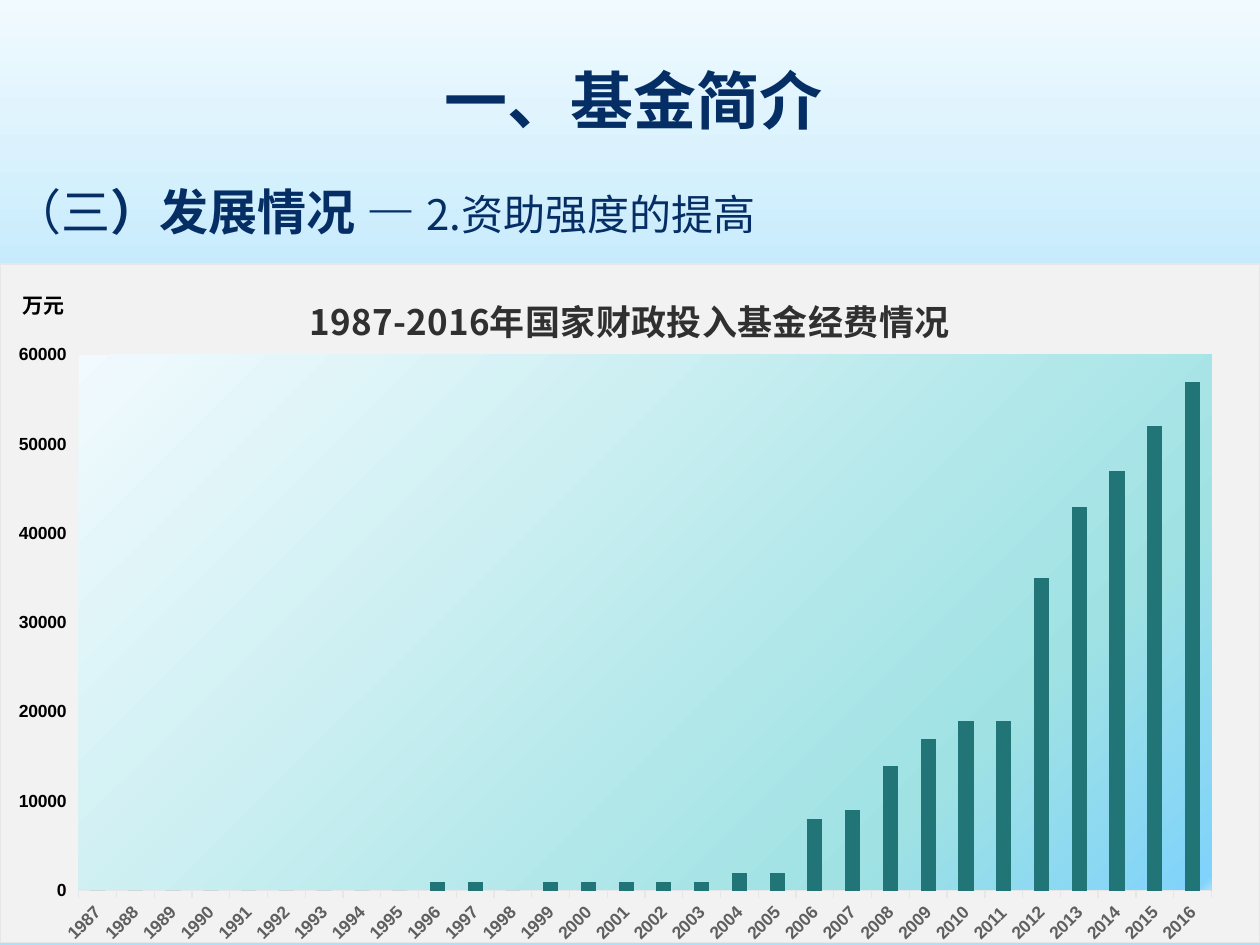
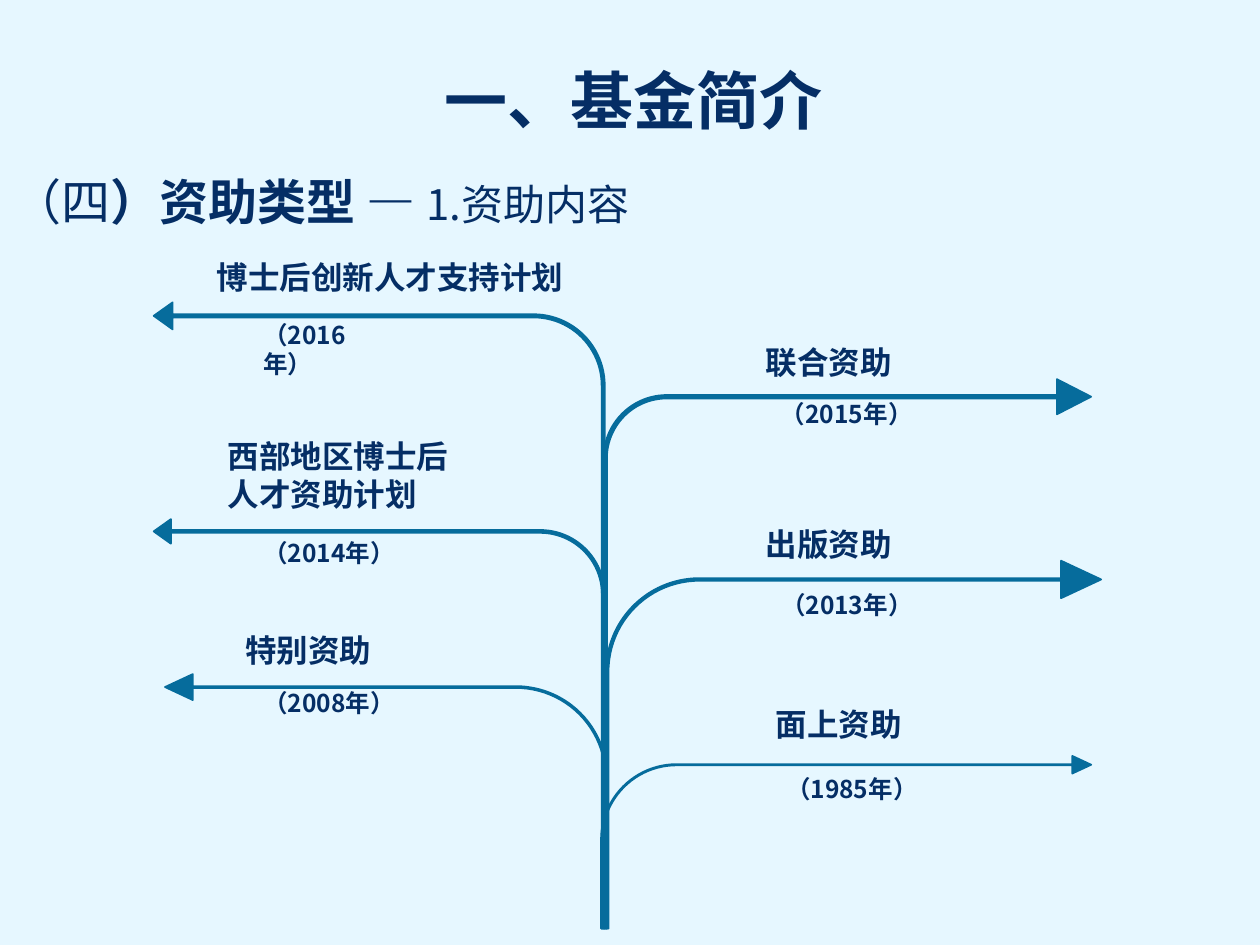
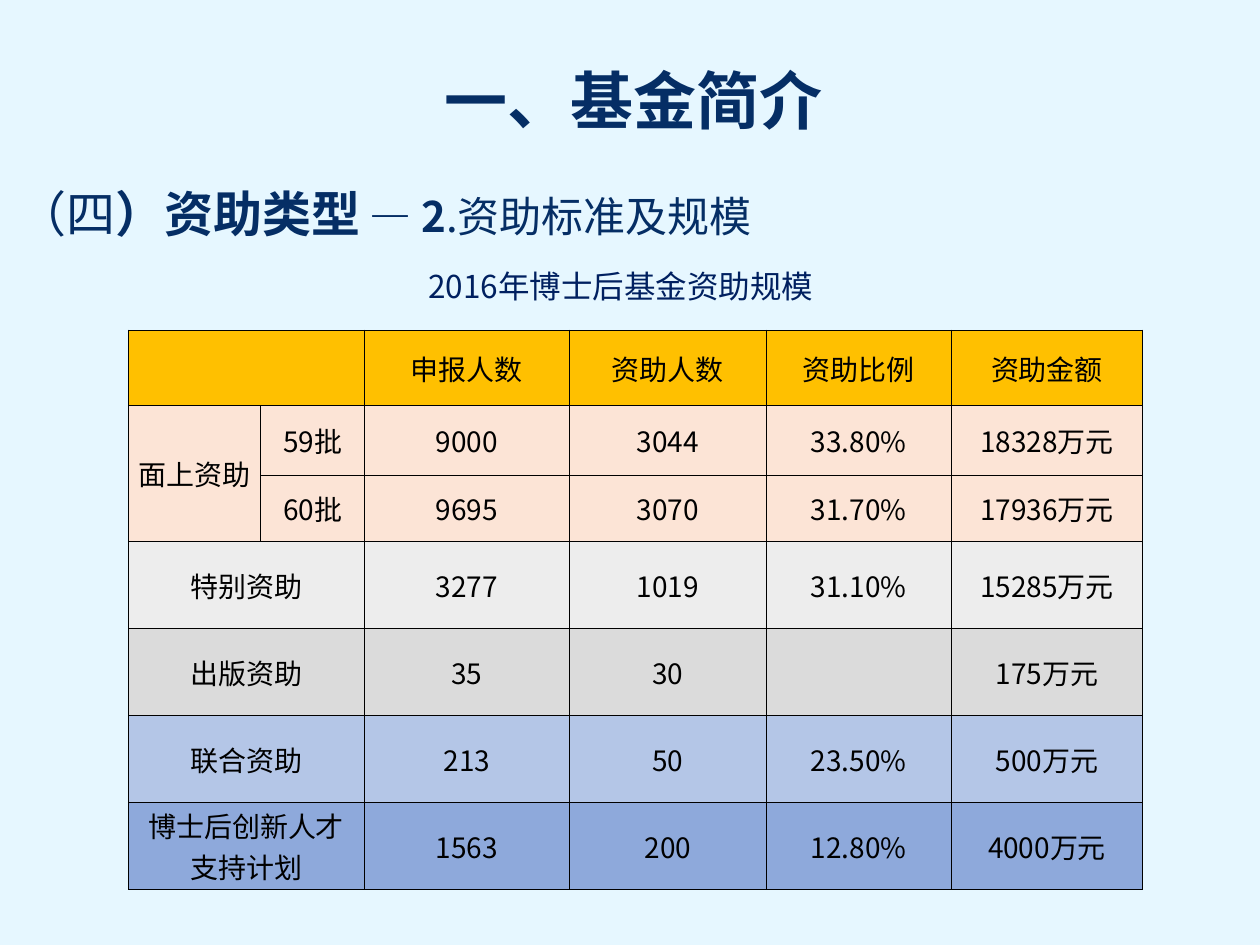
from lxml import etree
from pptx import Presentation
from pptx.chart.data import CategoryChartData
from pptx.dml.color import RGBColor
from pptx.enum.chart import XL_CHART_TYPE, XL_TICK_MARK
from pptx.enum.shapes import MSO_SHAPE
from pptx.enum.text import MSO_ANCHOR, MSO_AUTO_SIZE, PP_ALIGN
from pptx.oxml import parse_xml
from pptx.oxml.ns import nsdecls, qn
from pptx.util import Inches, Pt

CENTER = PP_ALIGN.CENTER
LEFT = PP_ALIGN.LEFT
TOP = MSO_ANCHOR.TOP
MIDDLE = MSO_ANCHOR.MIDDLE
NO_AUTOFIT = MSO_AUTO_SIZE.NONE
BENT_ARROW = MSO_SHAPE.BENT_ARROW
COLUMNS = XL_CHART_TYPE.COLUMN_CLUSTERED
TICK_OUT = XL_TICK_MARK.OUTSIDE
TICK_NONE = XL_TICK_MARK.NONE

FONT = "Noto Sans CJK SC"
CHART_FONT = "Arial"
COLORS = {
    "page": "E6F7FF", "navy": "052E65", "caption": "002060", "branch": "066C9C",
    "black": "000000", "chart": "F2F2F2", "edge": "E7E7E7", "bar": "227577",
    "chart_title": "303030", "years": "5F5F5F", "header": "FFC000", "general": "FCE4D6",
    "special": "EDEDED", "publishing": "DBDBDB", "joint": "B4C6E7", "innovation": "8EA9DB",
}
PAGE_GRADIENT = [(0, "F1FAFE"), (74, "80D3FA"), (83, "80D3FA"), (100, "AAE2FC")]
PLOT_GRADIENT = [(0, "F1FAFE"), (77, "A0E2E4"), (99, "80D3FA"), (100, "AAE2FC")]

TITLE = "一、基金简介"
GROWTH_HEADING = [("（三", 28, False), ("）发展情况 — ", 28, True), ("2.资助强度的提高", 24, False)]
TYPES_HEADING = [("（四", 28, False), ("）资助类型 — ", 28, True), ("1.资助内容", 24, False)]
SCALE_HEADING = [("（四", 28, False), ("）资助类型", 28, True), (" — 2", 24, True),
                 (".资助标准及规模", 24, False)]

CHART_TITLE = "1987-2016年国家财政投入基金经费情况"
FIRST_YEAR = 1987
FUNDING = ([0] * 9 + [1000, 1000, 0] + [1000] * 5
           + [2000, 2000, 8000, 9000, 14000, 17000, 19000, 19000,
              35000, 43000, 47000, 52000, 57000])
PLOT_LAYOUT = {"x": 0.062, "y": 0.134, "w": 0.9, "h": 0.79}

TRUNK_BOTTOM = 7.37
BRANCHES = [
    {"arrow": (4.77, 6, 3.89), "bend": (0.007, 0.051, 0.109, 0.438), "left": False,
     "name": ["面上资助"], "name_at": (6.06, 5.55, 1.54),
     "year": "（1985年）", "year_at": (6.14, 6.09, 1.38)},
    {"arrow": (4.81, 4.45, 3.93), "bend": (0.007, 0.051, 0.109, 0.254), "left": False,
     "name": ["出版资助"], "name_at": (5.98, 4.12, 1.54),
     "year": "（2013年）", "year_at": (6.1, 4.63, 1.72)},
    {"arrow": (4.79, 3.01, 3.87), "bend": (0.007, 0.036, 0.07, 0.13), "left": False,
     "name": ["联合资助"], "name_at": (5.98, 2.67, 1.54),
     "year": "（2015年）", "year_at": (6.1, 3.12, 1.5)},
    {"arrow": (1.31, 5.35, 3.51), "bend": (0.007, 0.051, 0.109, 0.359), "left": True,
     "name": ["特别资助"], "name_at": (1.85, 4.96, 1.54),
     "year": "（2008年）", "year_at": (1.99, 5.41, 1.52)},
    {"arrow": (1.22, 4.12, 3.58), "bend": (0.007, 0.03, 0.042, 0.158), "left": True,
     "name": ["西部地区博士后", "人才资助计划"], "name_at": (1.71, 3.42, 2.3),
     "year": "（2014年）", "year_at": (1.99, 4.22, 1.6)},
    {"arrow": (1.22, 2.4, 3.58), "bend": (0.007, 0.03, 0.042, 0.158), "left": True,
     "name": ["博士后创新人才支持计划"], "name_at": (1.62, 2, 3.51),
     "year": "（2016年）", "year_at": (1.99, 2.49, 1.19)},
]

SCALE_CAPTION = "2016年博士后基金资助规模"
COLUMN_WIDTHS = [1.05, 0.82, 1.63, 1.56, 1.47, 1.52]
SCALE_ROWS = [
    ("header", 0.6, ["", "", "申报人数", "资助人数", "资助比例", "资助金额"]),
    ("general", 0.55, ["面上资助", "59批", "9000", "3044", "33.80%", "18328万元"]),
    ("general", 0.53, ["", "60批", "9695", "3070", "31.70%", "17936万元"]),
    ("special", 0.69, ["特别资助", "", "3277", "1019", "31.10%", "15285万元"]),
    ("publishing", 0.69, ["出版资助", "", "35", "30", "", "175万元"]),
    ("joint", 0.69, ["联合资助", "", "213", "50", "23.50%", "500万元"]),
    ("innovation", 0.69, ["博士后创新人才\n支持计划", "", "1563", "200", "12.80%", "4000万元"]),
]
MERGES = [((1, 0), (2, 0))] + [((row, 0), (row, 1)) for row in (0, 3, 4, 5, 6)]


def rgb(name):
    return RGBColor.from_string(COLORS[name])


def gradient(stops, angle):
    marks = "".join(f'<a:gs pos="{position * 1000}"><a:srgbClr val="{color}"/></a:gs>'
                    for position, color in stops)
    return (f'<a:gradFill {nsdecls("a")} rotWithShape="1"><a:gsLst>{marks}</a:gsLst>'
            f'<a:lin ang="{angle * 60000}" scaled="0"/></a:gradFill>')


def style_font(font, size, color, bold=False, name=FONT):
    font.name = name
    font.size = Pt(size)
    font.bold = bold
    font.color.rgb = rgb(color)


def add_span(para, text, size, color="navy", bold=False):
    span = para.add_run()
    span.text = text
    style_font(span.font, size, color, bold)
    east_asian = etree.Element(qn("a:ea"), typeface=FONT)
    span.font._element.find(qn("a:latin")).addnext(east_asian)


def fill_lines(frame, lines, size, color="navy", bold=False, align=LEFT):
    for index, line in enumerate(lines):
        para = frame.add_paragraph() if index else frame.paragraphs[0]
        para.alignment = align
        add_span(para, line, size, color, bold)


def place(shape, left, top, width, height):
    shape.left, shape.top = Inches(left), Inches(top)
    shape.width, shape.height = Inches(width), Inches(height)


def add_text(page, at, lines, size, color="navy", bold=False, align=LEFT, anchor=TOP):
    box = page.shapes.add_textbox(*map(Inches, at))
    box.text_frame.word_wrap = True
    box.text_frame.vertical_anchor = anchor
    fill_lines(box.text_frame, lines, size, color, bold, align)


def add_page(deck, heading, heading_at, hanging=0.12, space=4):
    page = deck.slides.add_slide(deck.slide_layouts[1])
    title, body = page.placeholders
    place(title, 0.24, 0.44, 9.57, 0.7)
    title.text_frame.auto_size = NO_AUTOFIT
    title.text_frame.vertical_anchor = MIDDLE
    fill_lines(title.text_frame, [TITLE], 36, bold=True, align=CENTER)

    place(body, *heading_at)
    body.text_frame.auto_size = NO_AUTOFIT
    para = body.text_frame.paragraphs[0]
    para.space_before = Pt(space)
    properties = para._p.get_or_add_pPr()
    properties.set("marL", str(Inches(hanging)))
    properties.set("indent", str(-Inches(hanging)))
    etree.SubElement(properties, qn("a:buNone"))
    for text, size, bold in heading:
        add_span(para, text, size, bold=bold)
    return page


def style_axis(axis, color):
    axis.has_major_gridlines = False
    axis.major_tick_mark = TICK_OUT
    axis.minor_tick_mark = TICK_NONE
    style_font(axis.tick_labels.font, 10, color, True, CHART_FONT)


def style_chart_areas(chart):
    space = chart._chartSpace
    space.find(qn("c:chart")).addnext(parse_xml(
        f'<c:spPr {nsdecls("c", "a")}><a:solidFill><a:srgbClr val="{COLORS["chart"]}"/></a:solidFill>'
        f'<a:ln w="9525"><a:solidFill><a:srgbClr val="{COLORS["edge"]}"/></a:solidFill></a:ln></c:spPr>'))
    area = space.find(".//" + qn("c:plotArea"))
    for layout in area.findall(qn("c:layout")):
        area.remove(layout)
    modes = '<c:layoutTarget val="inner"/><c:xMode val="edge"/><c:yMode val="edge"/>'
    sizes = "".join(f'<c:{key} val="{value}"/>' for key, value in PLOT_LAYOUT.items())
    area.insert(0, parse_xml(f'<c:layout {nsdecls("c")}><c:manualLayout>{modes}{sizes}'
                             '</c:manualLayout></c:layout>'))
    area.append(parse_xml(f'<c:spPr {nsdecls("c", "a")}>{gradient(PLOT_GRADIENT, 45)}</c:spPr>'))


def build_growth(deck):
    page = add_page(deck, GROWTH_HEADING, (0, 1.39, 7.88, 0.63))
    page.background.fill.gradient()
    old = page._element.find(".//" + qn("p:bgPr") + "/" + qn("a:gradFill"))
    old.getparent().replace(old, parse_xml(gradient(PAGE_GRADIENT, 90)))

    data = CategoryChartData()
    data.categories = [str(FIRST_YEAR + index) for index in range(len(FUNDING))]
    data.add_series("Series 1", FUNDING)
    chart = page.shapes.add_chart(COLUMNS, *map(Inches, (0, 2.09, 10, 5.4)), data).chart
    style_font(chart.font, 10, "years", name=CHART_FONT)
    chart.has_legend = False
    chart.has_title = True
    add_span(chart.chart_title.text_frame.paragraphs[0], CHART_TITLE, 20, "chart_title", True)

    years, amounts = chart.category_axis, chart.value_axis
    style_axis(years, "years")
    years.format.line.color.rgb = rgb("edge")
    years.format.line.width = Pt(0.75)
    years._element.find(qn("c:txPr")).find(qn("a:bodyPr")).set("rot", "-2700000")
    style_axis(amounts, "black")
    amounts.format.line.fill.background()
    amounts.minimum_scale, amounts.maximum_scale, amounts.major_unit = 0, 60000, 10000

    plot = chart.plots[0]
    plot.gap_width = 150
    plot.vary_by_categories = False
    bars = plot.series[0].format.fill
    bars.solid()
    bars.fore_color.rgb = rgb("bar")
    style_chart_areas(chart)
    add_text(page, (0.03, 2.19, 0.63, 0.47), ["万元"], 12, "black", True, CENTER, MIDDLE)


def add_branch(page, branch):
    left, top, width = branch["arrow"]
    arrow = page.shapes.add_shape(
        BENT_ARROW, *map(Inches, (left, top, width, TRUNK_BOTTOM - top)))
    for index, value in enumerate(branch["bend"]):
        arrow.adjustments[index] = value
    if branch["left"]:
        arrow._element.spPr.find(qn("a:xfrm")).set("flipH", "1")
    arrow.shadow.inherit = False
    arrow.fill.solid()
    arrow.fill.fore_color.rgb = rgb("branch")
    arrow.line.color.rgb = rgb("branch")
    arrow.line.width = Pt(1)


def build_types(deck):
    page = add_page(deck, TYPES_HEADING, (0, 1.31, 7.88, 0.63))
    for branch in BRANCHES:
        add_branch(page, branch)
    for branch in BRANCHES:
        name = branch["name"]
        add_text(page, (*branch["name_at"], 0.1 + 0.3 * len(name)), name, 18, bold=True)
        add_text(page, (*branch["year_at"], 0.33), [branch["year"]], 14, bold=True)


def style_cell(cell, text, color):
    cell.margin_left = cell.margin_right = cell.margin_top = cell.margin_bottom = 0
    cell.vertical_anchor = MIDDLE
    cell.fill.solid()
    cell.fill.fore_color.rgb = rgb(color)
    properties = cell._tc.get_or_add_tcPr()
    for index, side in enumerate(("lnL", "lnR", "lnT", "lnB")):
        properties.insert(index, parse_xml(
            f'<a:{side} {nsdecls("a")} w="6350"><a:solidFill>'
            f'<a:srgbClr val="{COLORS["black"]}"/></a:solidFill></a:{side}>'))
    if text:
        fill_lines(cell.text_frame, text.split("\n"), 16, "black", align=CENTER)


def build_scale(deck):
    page = add_page(deck, SCALE_HEADING, (0.04, 1.41, 6.75, 0.57), hanging=0, space=0)
    heights = [height for _, height, _ in SCALE_ROWS]
    size = (1.02, 2.62, sum(COLUMN_WIDTHS), sum(heights))
    table = page.shapes.add_table(len(heights), len(COLUMN_WIDTHS), *map(Inches, size)).table
    table.first_row = False
    table.horz_banding = False
    for column, width in zip(table.columns, COLUMN_WIDTHS):
        column.width = Inches(width)
    for row, (color, height, texts) in zip(table.rows, SCALE_ROWS):
        row.height = Inches(height)
        for cell, text in zip(row.cells, texts):
            style_cell(cell, text, color)
    for first, last in MERGES:
        table.cell(*first).merge(table.cell(*last))
    add_text(page, (3.3, 2.07, 3.5, 0.4), [SCALE_CAPTION], 18, "caption")


def main():
    deck = Presentation()
    deck.slide_width, deck.slide_height = Inches(10), Inches(7.5)
    backdrop = deck.slide_master.background.fill
    backdrop.solid()
    backdrop.fore_color.rgb = rgb("page")
    build_growth(deck)
    build_types(deck)
    build_scale(deck)
    deck.save("out.pptx")


if __name__ == "__main__":
    main()
